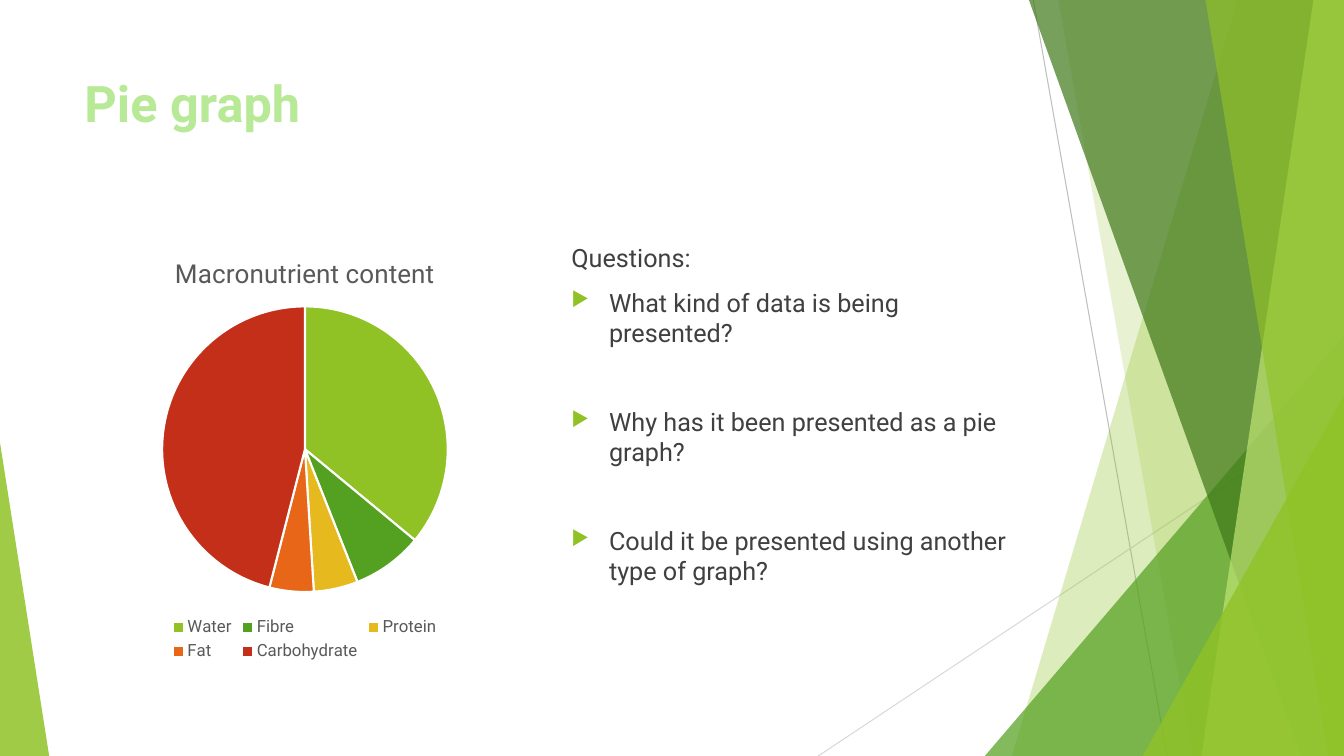
from lxml import etree
from pptx import Presentation
from pptx import util as u
from pptx.chart.data import CategoryChartData
from pptx.dml.color import RGBColor
from pptx.enum import chart as charts, shapes, text
from pptx.oxml import parse_xml
from pptx.oxml.ns import nsdecls, qn

FONT = "Roboto"
WIDTH, HEIGHT = 33.87, 19.05


def paint(target, color, alpha=100):
    target.solid()
    target.fore_color.rgb = RGBColor.from_string(color)
    if alpha < 100:
        node = target._xPr.find(qn("a:solidFill"))[0]
        etree.SubElement(node, qn("a:alpha"), val=str(alpha * 1000))


def style(font, color, **values):
    paint(font.fill, color)
    for name, value in {"name": FONT, **values}.items():
        setattr(font, name, value)


presentation = Presentation()
presentation.slide_width, presentation.slide_height = u.Cm(WIDTH), u.Cm(HEIGHT)
slide = presentation.slides.add_slide(presentation.slide_layouts[6])

for color, *ends in [("BFBFBF", 26.04, 0, 29.41, HEIGHT), ("D9D9D9", WIDTH, 10.24, 20.62, HEIGHT)]:
    line = slide.shapes.add_connector(shapes.MSO_CONNECTOR.STRAIGHT, *map(u.Cm, ends))
    paint(line.line.fill, color)
    line.line.width = u.Pt(0.75)
    etree.SubElement(line._element.spPr, qn("a:effectLst"))

facets = [
    ("90C226", 30, "band", (31.19, 25.5)),
    ("90C226", 20, "band", (26.67, 30.05)),
    ("54A021", 72, "triangle", (24.82, 8.46, 9.05, 10.59)),
    ("3F7819", 70, "band", (25.93, 32.79)),
    ("C0E474", 70, "band", (33.1, 30.28)),
    ("90C226", 65, "band", (30.38, 33.48)),
    ("90C226", 80, "triangle", (28.8, 9.98, 5.07, 9.07)),
    ("90C226", 85, "triangle", (0, 11.15, 1.24, 7.9)),
]
for color, alpha, kind, geometry in facets:
    if kind == "band":
        top_x, bottom_x = geometry
        builder = slide.shapes.build_freeform(u.Cm(top_x), 0)
        corners = [(WIDTH, 0), (WIDTH, HEIGHT), (bottom_x, HEIGHT)]
        builder.add_line_segments([(u.Cm(x), u.Cm(y)) for x, y in corners], close=True)
        shape = builder.convert_to_shape()
    else:
        shape = slide.shapes.add_shape(shapes.MSO_SHAPE.ISOSCELES_TRIANGLE, *map(u.Cm, geometry))
        shape.adjustments[0] = 1 if geometry[0] else 0
    shape.shadow.inherit = False
    shape.line.fill.background()
    paint(shape.fill, color, alpha)

title = slide.shapes.add_textbox(u.Cm(1.88), u.Cm(1.7), u.Cm(23.88), u.Cm(3.66))
title.text_frame.word_wrap = True
run = title.text_frame.paragraphs[0].add_run()
run.text = "Pie graph"
style(run.font, "B7E996", size=u.Pt(36), bold=True)
run._r.get_or_add_rPr().insert(0, parse_xml(
    f'<a:ln {nsdecls("a")} w="22225"><a:solidFill><a:srgbClr val="54A021"/></a:solidFill></a:ln>'))

nutrients = {
    "Water": (36, "90C226"),
    "Fibre": (8, "54A021"),
    "Protein": (5, "E6B91E"),
    "Fat": (5, "E76618"),
    "Carbohydrate": (46, "C42F1A"),
}
data = CategoryChartData()
data.categories = list(nutrients)
data.add_series("Series 1", [value for value, color in nutrients.values()])
chart = slide.shapes.add_chart(
    charts.XL_CHART_TYPE.PIE, u.Cm(1.88), u.Cm(5.99), u.Cm(11.61), u.Cm(10.77), data).chart
style(chart.font, "000000", size=u.Pt(10))
chart.has_title = True
chart_title = chart.chart_title.text_frame
chart_title.text = "Macronutrient content"
style(chart_title.paragraphs[0].runs[0].font, "595959", size=u.Pt(18.6), bold=False)
chart.has_legend = True
chart.legend.position = charts.XL_LEGEND_POSITION.BOTTOM
chart.legend.include_in_layout = False
style(chart.legend.font, "595959", size=u.Pt(12))
plot = chart.plots[0]
plot.vary_by_categories = True
for index, (value, color) in enumerate(nutrients.values()):
    point = plot.series[0].points[index].format
    paint(point.fill, color)
    paint(point.line.fill, "FFFFFF")
    point.line.width = u.Pt(1.5)

plot_area = chart._chartSpace.chart.plotArea
for old_layout in plot_area.findall(qn("c:layout")):
    plot_area.remove(old_layout)
layout = etree.Element(qn("c:layout"))
manual = etree.SubElement(layout, qn("c:manualLayout"))
frame = {"layoutTarget": "inner", "xMode": "edge", "yMode": "edge",
         "x": "0.19", "y": "0.16", "w": "0.62", "h": "0.67"}
for tag, value in frame.items():
    etree.SubElement(manual, qn(f"c:{tag}"), val=value)
plot_area.insert(0, layout)

questions = [
    ("Questions:", 0, False),
    ("What kind of data is being presented?", 10, True),
    ("Why has it been presented as a pie graph?", 42, True),
    ("Could it be presented using another type of graph?", 42, True),
]
body = slide.shapes.add_textbox(u.Cm(14.15), u.Cm(5.99), u.Cm(11.63), u.Cm(10.77)).text_frame
body.word_wrap = True
body.vertical_anchor = text.MSO_ANCHOR.TOP
for index, (wording, gap, bulleted) in enumerate(questions):
    paragraph = body.add_paragraph() if index else body.paragraphs[0]
    paragraph.space_before = u.Pt(gap)
    run = paragraph.add_run()
    run.text = wording
    style(run.font, "404040", size=u.Pt(18))
    if bulleted:
        properties = paragraph._p.get_or_add_pPr()
        properties.set("marL", str(u.Cm(0.95)))
        properties.set("indent", str(-u.Cm(0.95)))
        bullet_color = etree.SubElement(properties, qn("a:buClr"))
        etree.SubElement(bullet_color, qn("a:srgbClr"), val="90C226")
        etree.SubElement(properties, qn("a:buSzPct"), val="80000")
        etree.SubElement(properties, qn("a:buChar"), char="▶")

presentation.save("out.pptx")
